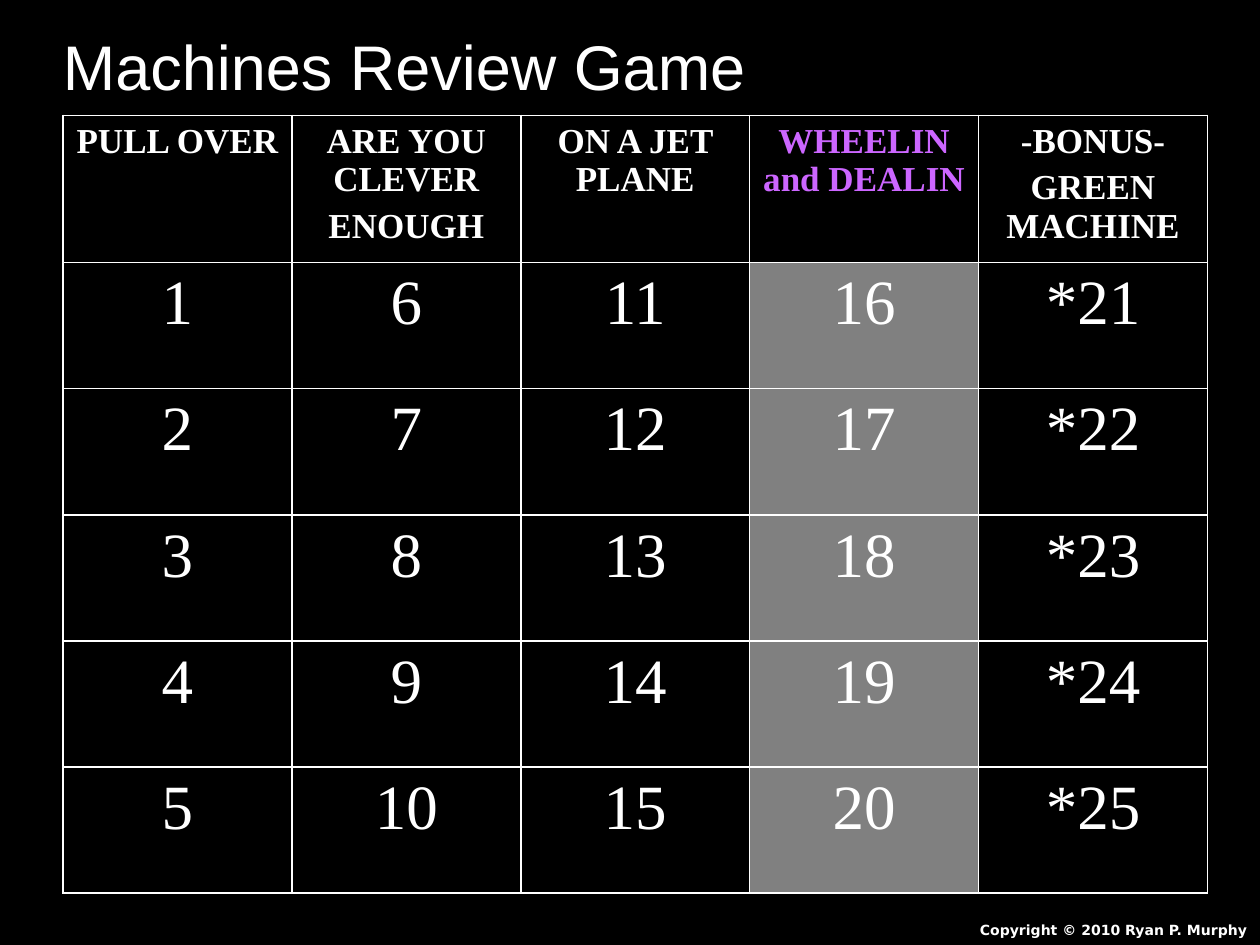
import pptx
import pptx.dml.color
import pptx.enum.text
import pptx.oxml
import pptx.oxml.ns
import pptx.presentation
import pptx.slide
import pptx.table
import pptx.text.text
import pptx.util
from dataclasses import dataclass

Pt = pptx.util.Pt
RGBColor = pptx.dml.color.RGBColor
Align = pptx.enum.text.PP_ALIGN
Anchor = pptx.enum.text.MSO_ANCHOR

BLACK = RGBColor(0, 0, 0)
WHITE = RGBColor(255, 255, 255)
GREY = RGBColor(128, 128, 128)
PURPLE = RGBColor(204, 102, 255)


@dataclass
class Style:
    face: str
    size: float
    bold: bool = False
    color: RGBColor = WHITE
    align: Align = Align.CENTER


@dataclass
class Topic:
    lines: list[str]
    color: RGBColor = WHITE
    fill: RGBColor | None = None
    mark: str = ""


TOPICS = [
    Topic(["PULL OVER"], fill=BLACK),
    Topic(["ARE YOU CLEVER", "ENOUGH"]),
    Topic(["ON A JET PLANE"]),
    Topic(["WHEELIN and DEALIN"], color=PURPLE, fill=GREY),
    Topic(["-BONUS-", "GREEN MACHINE"], mark="*"),
]
COUNT = 5
SERIF = "Times New Roman"


def write(frame: pptx.text.text.TextFrame, lines: list[str], style: Style) -> None:
    frame.word_wrap = True
    frame.text = "\n".join(lines)
    for index, para in enumerate(frame.paragraphs):
        para.alignment = style.align
        para.space_before = Pt(4.6 if index else 0)
        para.font.name = style.face
        para.font.size = Pt(style.size)
        para.font.bold = style.bold
        para.font.color.rgb = style.color


def border(cell: pptx.table._Cell) -> None:
    props = cell._tc.get_or_add_tcPr()
    for index, side in enumerate(("lnL", "lnR", "lnT", "lnB")):
        line = pptx.oxml.parse_xml(
            f'<a:{side} {pptx.oxml.ns.nsdecls("a")} w="{Pt(1)}"><a:solidFill>'
            f'<a:srgbClr val="{WHITE}"/></a:solidFill></a:{side}>'
        )
        props.insert(index, line)


def paint(cell: pptx.table._Cell, color: RGBColor | None) -> None:
    if color is None:
        cell.fill.background()
    else:
        cell.fill.solid()
        cell.fill.fore_color.rgb = color


def draw_board(slide: pptx.slide.Slide) -> None:
    frame = slide.shapes.add_table(
        COUNT + 1, len(TOPICS), Pt(36), Pt(66), Pt(654), Pt(444.2)
    )
    table = frame.table
    table.first_row = False
    table.horz_banding = False
    for index, row in enumerate(table.rows):
        row.height = Pt(72.1 if index else 84)
    for col, topic in enumerate(TOPICS):
        table.columns[col].width = Pt(130.8)
        for row in range(COUNT + 1):
            cell = table.cell(row, col)
            if row == 0:
                write(cell.text_frame, topic.lines, Style(SERIF, 20, True, topic.color))
                paint(cell, None)
            else:
                label = f"{topic.mark}{col * COUNT + row}"
                write(cell.text_frame, [label], Style(SERIF, 36))
                paint(cell, topic.fill)
            border(cell)


def draw_title(slide: pptx.slide.Slide) -> None:
    title = slide.shapes.title
    title.left, title.top = Pt(-36), Pt(12)
    title.width, title.height = Pt(534), Pt(50.4)
    write(title.text_frame, ["Machines Review Game"], Style("Arial", 36))
    title.text_frame.vertical_anchor = Anchor.TOP


def draw_credit(slide: pptx.slide.Slide) -> None:
    box = slide.shapes.add_textbox(Pt(510), Pt(523.2), Pt(210), Pt(16.8))
    style = Style("DejaVu Sans", 8, True, align=Align.RIGHT)
    write(box.text_frame, ["Copyright © 2010 Ryan P. Murphy"], style)


def main() -> None:
    deck = pptx.Presentation()
    deck.slide_width, deck.slide_height = Pt(720), Pt(540)
    slide = deck.slides.add_slide(deck.slide_layouts[5])
    slide.background.fill.solid()
    slide.background.fill.fore_color.rgb = BLACK
    draw_board(slide)
    draw_credit(slide)
    draw_title(slide)
    deck.save("out.pptx")


if __name__ == "__main__":
    main()
